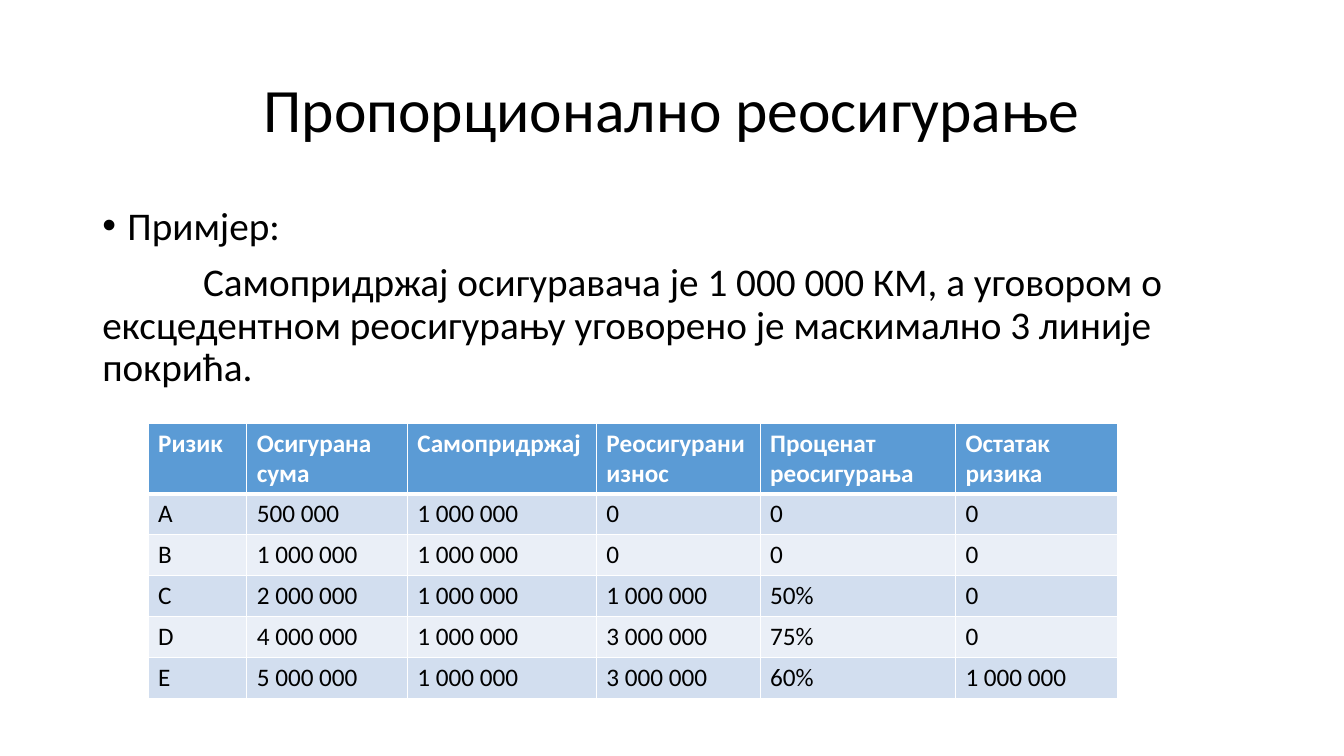
from lxml.etree import SubElement
from pptx import Presentation
from pptx.dml.color import RGBColor
from pptx.enum.text import MSO_ANCHOR, PP_ALIGN
from pptx.oxml.ns import qn
from pptx.util import Emu, Pt

EMU_PER_PX = 9525
EMU_PER_POINT = 12700


def px(length):
    return Emu(length * EMU_PER_PX)


def color(hex_string):
    return RGBColor.from_string(hex_string)


class SlideBuilder:
    """Holds the style and the current slide, and adds elements to it."""

    font_name = "Calibri"
    ink = "000000"
    paper = "FFFFFF"
    header_fill = "5B9BD5"
    band_fills = ("D2DEEF", "EAEFF7")

    def __init__(self, deck):
        self.page = deck.slides.add_slide(deck.slide_layouts[6])

    def style(self, para, size, hex_string, bold=False):
        para.font.name = self.font_name
        para.font.size = Pt(size)
        para.font.bold = bold
        para.font.color.rgb = color(hex_string)

    def text(self, left, top, width, height, paragraphs, size,
             align=PP_ALIGN.LEFT, anchor=MSO_ANCHOR.TOP):
        box = self.page.shapes.add_textbox(px(left), px(top), px(width), px(height))
        frame = box.text_frame
        frame.word_wrap = True
        frame.vertical_anchor = anchor
        for index, (words, margin, indent, bullet) in enumerate(paragraphs):
            para = frame.add_paragraph() if index else frame.paragraphs[0]
            para.text = words
            para.alignment = align
            para.line_spacing = 0.9
            para.space_before = Pt(10 if index else 0)
            properties = para._p.get_or_add_pPr()
            properties.set("marL", str(px(margin)))
            properties.set("indent", str(px(indent)))
            if bullet:
                SubElement(properties, qn("a:buFont"), typeface="Arial")
                SubElement(properties, qn("a:buChar"), char=bullet)
            self.style(para, size, self.ink)

    def border(self, cell, side, points):
        line = SubElement(cell._tc.get_or_add_tcPr(), qn(f"a:ln{side}"),
                          w=str(points * EMU_PER_POINT))
        fill = SubElement(line, qn("a:solidFill"))
        SubElement(fill, qn("a:srgbClr"), val=self.paper)

    def cell(self, cell, words, row):
        for side in "LRTB":
            under_header = (row, side) in ((0, "B"), (1, "T"))
            self.border(cell, side, 3 if under_header else 1)
        header = row == 0
        cell.fill.solid()
        cell.fill.fore_color.rgb = color(
            self.header_fill if header else self.band_fills[(row - 1) % 2])
        cell.text = words
        self.style(cell.text_frame.paragraphs[0], 18,
                   self.paper if header else self.ink, header)

    def table(self, left, top, widths, heights, rows):
        table = self.page.shapes.add_table(
            len(rows), len(widths), px(left), px(top),
            px(sum(widths)), px(sum(heights))).table
        for column, width in zip(table.columns, widths):
            column.width = px(width)
        for row, (height, values) in enumerate(zip(heights, rows)):
            table.rows[row].height = px(height)
            for column, words in enumerate(values):
                self.cell(table.cell(row, column), words, row)


def main():
    deck = Presentation()
    deck.slide_width, deck.slide_height = px(1280), px(720)
    slide = SlideBuilder(deck)
    slide.text(88, 38, 1104, 139, [("Пропорционално реосигурање", 0, 0, None)],
               44, PP_ALIGN.CENTER, MSO_ANCHOR.MIDDLE)
    slide.text(88, 192, 1104, 457, [
        ("Примјер:", 24, -24, "•"),
        ("Самопридржај осигуравача је 1 000 000 КМ, а уговором о ексцедентном "
         "реосигурању уговорено је маскимално 3 линије покрића.", 0, 96, None),
    ], 28)
    risks = [
        ("Ризик", "Осигурана сума", "Самопридржај", "Реосигурани износ",
         "Проценат реосигурања", "Остатак ризика"),
        ("А", "500 000", "1 000 000", "0", "0", "0"),
        ("В", "1 000 000", "1 000 000", "0", "0", "0"),
        ("С", "2 000 000", "1 000 000", "1 000 000", "50%", "0"),
        ("D", "4 000 000", "1 000 000", "3 000 000", "75%", "0"),
        ("Е", "5 000 000", "1 000 000", "3 000 000", "60%", "1 000 000"),
    ]
    slide.table(141, 403, [94, 153, 180, 156, 186, 154], [67] + [39] * 5, risks)
    deck.save("out.pptx")


if __name__ == "__main__":
    main()
